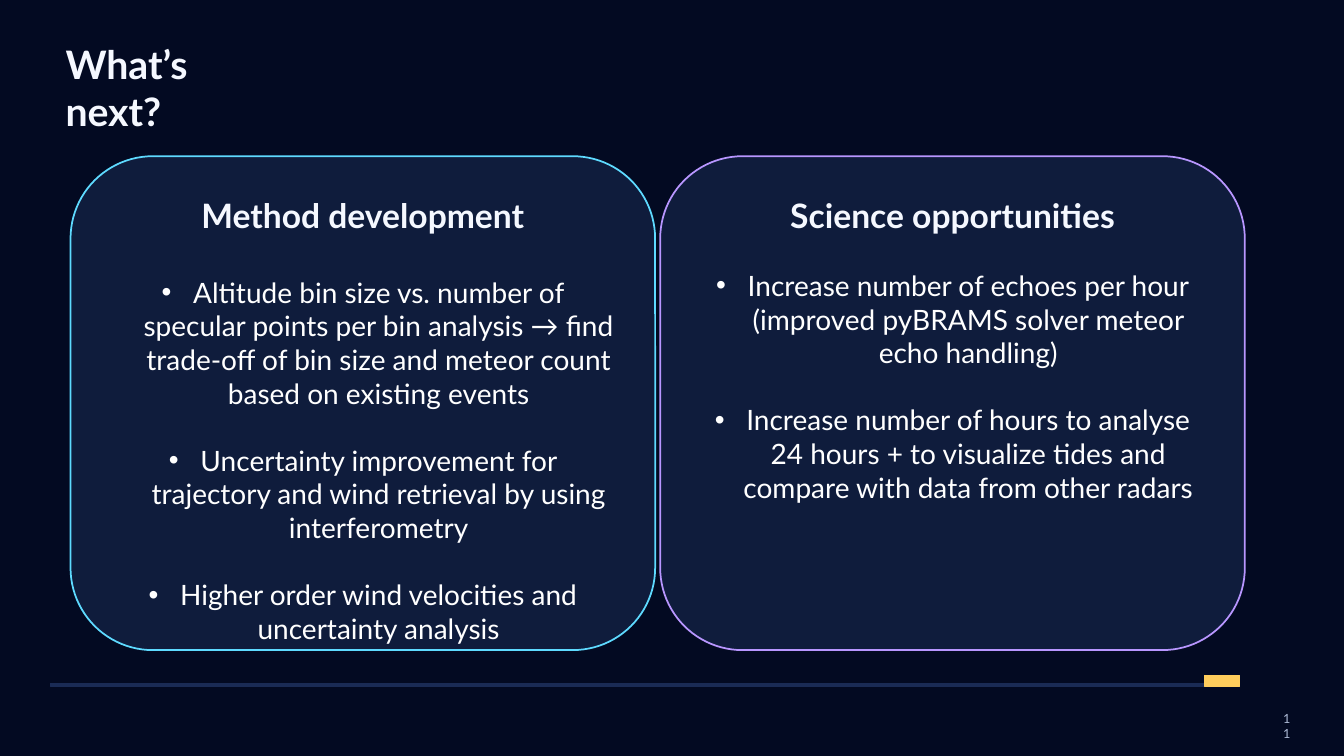
import pptx
import pptx.dml.color
import pptx.enum.shapes
import pptx.enum.text
import pptx.oxml.ns
import pptx.util
from lxml import etree

Pt = pptx.util.Pt
RGBColor = pptx.dml.color.RGBColor
Align = pptx.enum.text.PP_ALIGN
Geometry = pptx.enum.shapes.MSO_SHAPE

NIGHT = RGBColor(0x03, 0x0A, 0x22)
PANEL = RGBColor(0x0F, 0x1C, 0x3C)
CYAN = RGBColor(0x5E, 0xDA, 0xFF)
VIOLET = RGBColor(0xB8, 0x96, 0xFF)
RULE = RGBColor(0x1A, 0x2B, 0x55)
AMBER = RGBColor(0xFF, 0xCD, 0x5C)
PALE = RGBColor(0xF5, 0xF8, 0xFF)
WHITE = RGBColor(0xFF, 0xFF, 0xFF)
MUTED = RGBColor(0xAF, 0xBC, 0xD7)

CARD_TOP, CARD_WIDTH, CARD_HEIGHT = 111.6, 417.6, 352.8
CARD_LEFT, CARD_STEP = 50.4, 421.2
LIST_INSET = 29.45  # card margin plus the rounded corner
LIST_BOTTOM = 460

# heading, outline colour, top of the list, list items
CARDS = [
    ("Method development", CYAN, 196.6, [
        "Altitude bin size vs. number of specular points per bin analysis → "
        "find trade-off of bin size and meteor count based on existing events",
        "Uncertainty improvement for trajectory and wind retrieval by using "
        "interferometry",
        "Higher order wind velocities and uncertainty analysis",
    ]),
    ("Science opportunities", VIOLET, 191.8, [
        "Increase number of echoes per hour (improved pyBRAMS solver meteor "
        "echo handling)",
        "Increase number of hours to analyse 24 hours + to visualize tides "
        "and compare with data from other radars",
    ]),
]


class SlideBuilder:
    font = "Lato"
    bullet_indent = Pt(22.5)

    def __init__(self, slide):
        self.slide = slide
        slide.background.fill.solid()
        slide.background.fill.fore_color.rgb = NIGHT

    def place(self, shape, left, top, width, height):
        shape.left, shape.top = Pt(left), Pt(top)
        shape.width, shape.height = Pt(width), Pt(height)

    def frame(self, shape, across, down):
        """Prepare a top-anchored, wrapping text frame with the given margins."""
        frame = shape.text_frame
        frame.word_wrap = True
        frame.auto_size = pptx.enum.text.MSO_AUTO_SIZE.NONE
        frame.vertical_anchor = pptx.enum.text.MSO_ANCHOR.TOP
        frame.margin_left = frame.margin_right = Pt(across)
        frame.margin_top = frame.margin_bottom = Pt(down)
        return frame

    def add_span(self, para, text, size, colour, align, bold=False):
        para.alignment = align
        span = para.add_run()
        span.text = text
        span.font.name = self.font
        span.font.size = Pt(size)
        span.font.bold = bold
        span.font.color.rgb = colour

    def title(self, text, left, top, width, height):
        box = self.slide.shapes.title
        self.place(box, left, top, width, height)
        para = self.frame(box, 7.2, 3.6).paragraphs[0]
        self.add_span(para, text, 28, PALE, Align.LEFT, bold=True)

    def label(self, text, left, top, width, height):
        box = self.slide.shapes.add_textbox(
            Pt(left), Pt(top), Pt(width), Pt(height))
        para = self.frame(box, 7.2, 3.6).paragraphs[0]
        self.add_span(para, text, 9, MUTED, Align.RIGHT)

    def shape(self, geometry, left, top, width, height, fill, line, weight):
        shape = self.slide.shapes.add_shape(
            geometry, Pt(left), Pt(top), Pt(width), Pt(height))
        shape.shadow.inherit = False
        shape.fill.solid()
        shape.fill.fore_color.rgb = fill
        shape.line.color.rgb = line
        shape.line.width = Pt(weight)
        return shape

    def bar(self, left, top, width, height, colour):
        self.shape(Geometry.RECTANGLE, left, top, width, height,
                   colour, colour, 0.5)

    def card(self, heading, left, outline):
        card = self.shape(Geometry.ROUNDED_RECTANGLE, left, CARD_TOP,
                          CARD_WIDTH, CARD_HEIGHT, PANEL, outline, 1.25)
        para = self.frame(card, 12.24, 10.08).paragraphs[0]
        self.add_span(para, heading, 24, PALE, Align.CENTER, bold=True)

    def bullets(self, box, items, left, top, width, height):
        self.place(box, left, top, width, height)
        # Bring the list in front of its card
        box._element.getparent().append(box._element)
        frame = self.frame(box, 0, 0)
        for index, item in enumerate(items):
            para = frame.add_paragraph() if index else frame.paragraphs[0]
            properties = para._p.get_or_add_pPr()
            properties.set("marL", str(self.bullet_indent))
            properties.set("indent", str(-self.bullet_indent))
            for tag, name, value in (("a:buFont", "typeface", "Arial"),
                                     ("a:buChar", "char", "•")):
                etree.SubElement(
                    properties, pptx.oxml.ns.qn(tag)).set(name, value)
            para.space_before = Pt(24 if index else 0)
            self.add_span(para, item, 20, WHITE, Align.CENTER)


def main():
    deck = pptx.Presentation()
    deck.slide_width, deck.slide_height = Pt(960), Pt(540)
    slide = deck.slides.add_slide(deck.slide_layouts[3])
    builder = SlideBuilder(slide)

    # Title
    builder.title("What’s next?", 39.6, 25.2, 150, 75)

    # Cards with their lists
    list_boxes = [slide.placeholders[1], slide.placeholders[2]]
    for column, (heading, outline, list_top, items) in enumerate(CARDS):
        left = CARD_LEFT + column * CARD_STEP
        builder.card(heading, left, outline)
        builder.bullets(list_boxes[column], items, left + LIST_INSET, list_top,
                        CARD_WIDTH - 2 * LIST_INSET, LIST_BOTTOM - list_top)

    # Footer rule, accent and page number
    builder.bar(36, 488.16, 849.6, 2.16, RULE)
    builder.bar(860.4, 482.4, 25.2, 7.92, AMBER)
    builder.label("11", 907.2, 504, 21.6, 28.8)

    deck.save("out.pptx")


if __name__ == "__main__":
    main()
